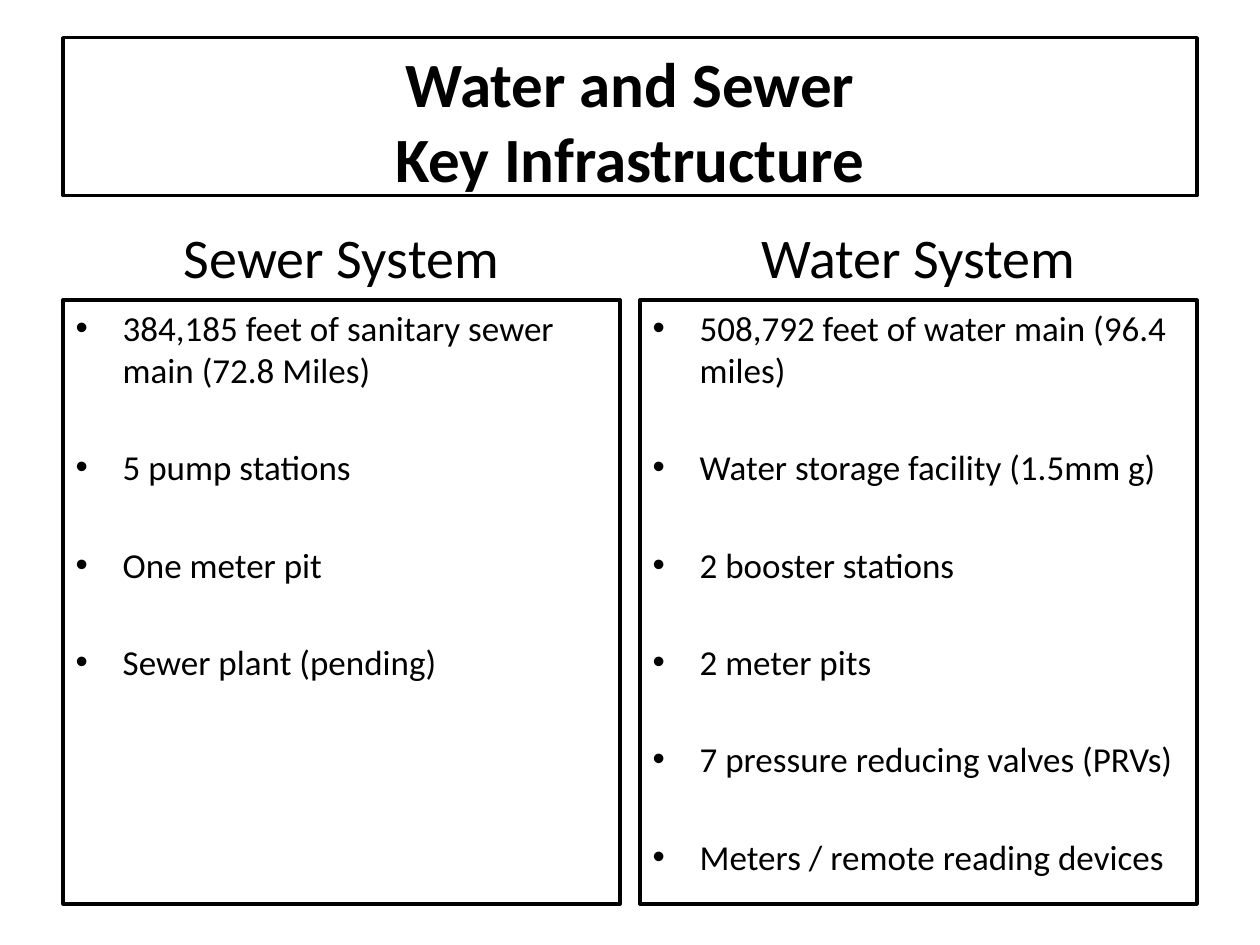
"""Build the water and sewer key infrastructure comparison slide."""
from dataclasses import dataclass

from pptx import Presentation
from pptx.dml.color import RGBColor
from pptx.enum import text
from pptx.oxml import xmlchemy
from pptx.oxml.ns import qn
from pptx.util import Cm, Pt


@dataclass(frozen=True)
class Theme:
    font: str = "Calibri"
    ink: RGBColor = RGBColor(0, 0, 0)
    paper: RGBColor = RGBColor(255, 255, 255)
    title_size: int = 36
    heading_size: int = 32
    list_size: int = 20
    item_gap: float = 31.6
    border: int = 2


@dataclass(frozen=True)
class Box:
    left: float
    top: float
    width: float
    height: float


@dataclass(frozen=True)
class System:
    heading: str
    items: tuple[str, ...]


THEME = Theme()
MARGIN, CONTENT_WIDTH, COLUMN_WIDTH = 1.27, 22.86, 11.23
TITLE_TOP, TITLE_HEIGHT = 0.76, 3.18
HEADING_TOP, HEADING_HEIGHT = 4.27, 1.78
LIST_TOP, LIST_HEIGHT = HEADING_TOP + HEADING_HEIGHT, 12.17
BULLET_INDENT = 0.95

SYSTEMS = (
    System("Sewer System", (
        "384,185 feet of sanitary sewer main (72.8 Miles)",
        "5 pump stations",
        "One meter pit",
        "Sewer plant (pending)",
    )),
    System("Water System", (
        "508,792 feet of water main (96.4 miles)",
        "Water storage facility (1.5mm g)",
        "2 booster stations",
        "2 meter pits",
        "7 pressure reducing valves (PRVs)",
        "Meters / remote reading devices",
    )),
)


def place(shape, box: Box, framed: bool = True) -> None:
    """Move a placeholder and give it a frame when wanted."""
    shape.left, shape.top = Cm(box.left), Cm(box.top)
    shape.width, shape.height = Cm(box.width), Cm(box.height)
    if framed:
        shape.fill.solid()
        shape.fill.fore_color.rgb = THEME.paper
        shape.line.color.rgb = THEME.ink
        shape.line.width = Pt(THEME.border)


def add_bullet(paragraph) -> None:
    """Give a paragraph a round bullet with a hanging indent."""
    properties = paragraph._p.get_or_add_pPr()
    properties.set("marL", str(Cm(BULLET_INDENT)))
    properties.set("indent", str(-Cm(BULLET_INDENT)))
    bullet = xmlchemy.OxmlElement("a:buChar")
    bullet.set("char", "•")
    font = xmlchemy.OxmlElement("a:buFont")
    font.set("typeface", "Arial")
    properties.extend((font, bullet))


def write(shape, lines: tuple[str, ...], *, size: int, bold: bool = False,
          align=text.PP_ALIGN.CENTER, anchor=text.MSO_ANCHOR.TOP,
          gap: float = 0, bulleted: bool = False) -> None:
    """Fill a shape with one formatted paragraph for each line."""
    frame = shape.text_frame
    frame.word_wrap = True
    frame.auto_size = text.MSO_AUTO_SIZE.NONE
    frame.vertical_anchor = anchor
    for index, line in enumerate(lines):
        paragraph = frame.add_paragraph() if index else frame.paragraphs[0]
        paragraph.text = line
        paragraph.alignment = align
        paragraph.space_before = Pt(gap if index else 0)
        if bulleted:
            add_bullet(paragraph)
        for run in paragraph.runs:
            run.font.name = THEME.font
            run.font.size = Pt(size)
            run.font.bold = bold
            run.font.color.rgb = THEME.ink


def add_system(heading, body, system: System, left: float) -> None:
    """Lay out one column with its heading and its framed list."""
    place(heading, Box(left, HEADING_TOP, COLUMN_WIDTH, HEADING_HEIGHT), framed=False)
    write(heading, (system.heading,), size=THEME.heading_size,
          anchor=text.MSO_ANCHOR.MIDDLE)
    place(body, Box(left, LIST_TOP, COLUMN_WIDTH, LIST_HEIGHT))
    write(body, system.items, size=THEME.list_size, align=text.PP_ALIGN.LEFT,
          gap=THEME.item_gap, bulleted=True)


def main() -> None:
    """Create the presentation and save it."""
    presentation = Presentation()
    presentation.slide_width, presentation.slide_height = Cm(25.4), Cm(19.05)
    layout = presentation.slide_layouts.get_by_name("Comparison")
    slide = presentation.slides.add_slide(layout)
    title, *columns = slide.placeholders
    place(title, Box(MARGIN, TITLE_TOP, CONTENT_WIDTH, TITLE_HEIGHT))
    write(title, ("Water and Sewer\vKey Infrastructure",),
          size=THEME.title_size, bold=True)
    step = CONTENT_WIDTH - COLUMN_WIDTH
    for index, system in enumerate(SYSTEMS):
        heading, body = columns[2 * index:2 * index + 2]
        add_system(heading, body, system, MARGIN + index * step)
    presentation.save("out.pptx")


if __name__ == "__main__":
    main()
